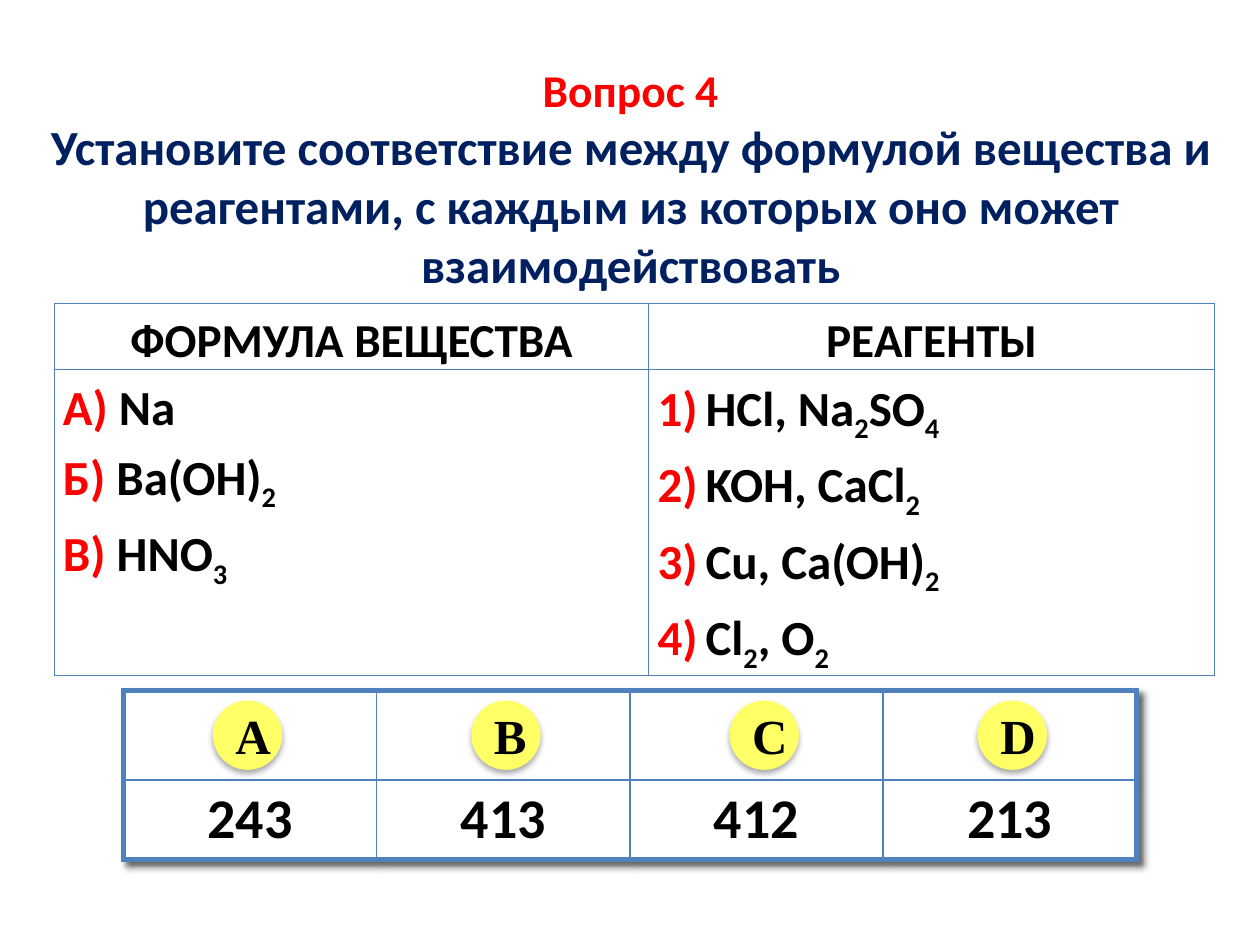
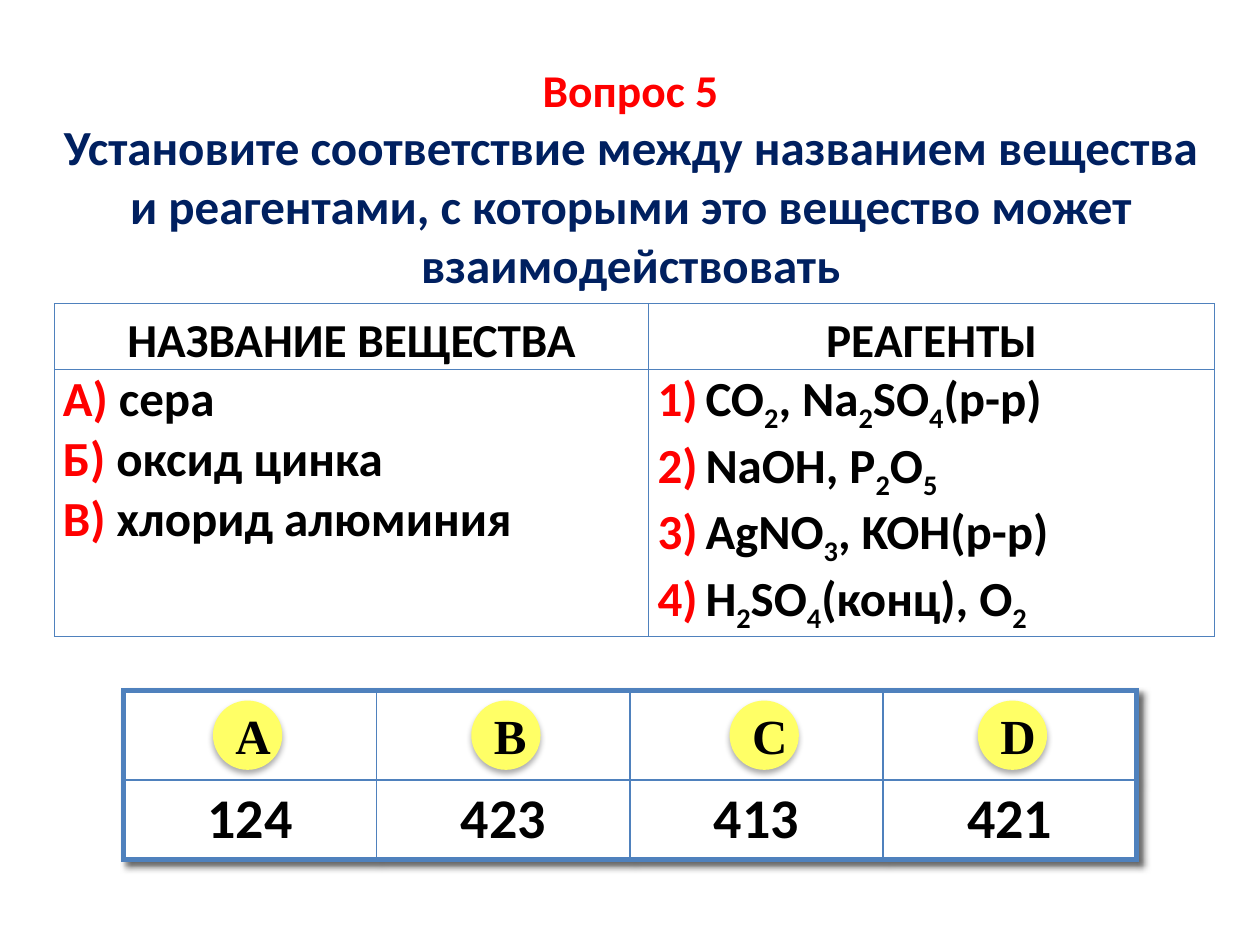
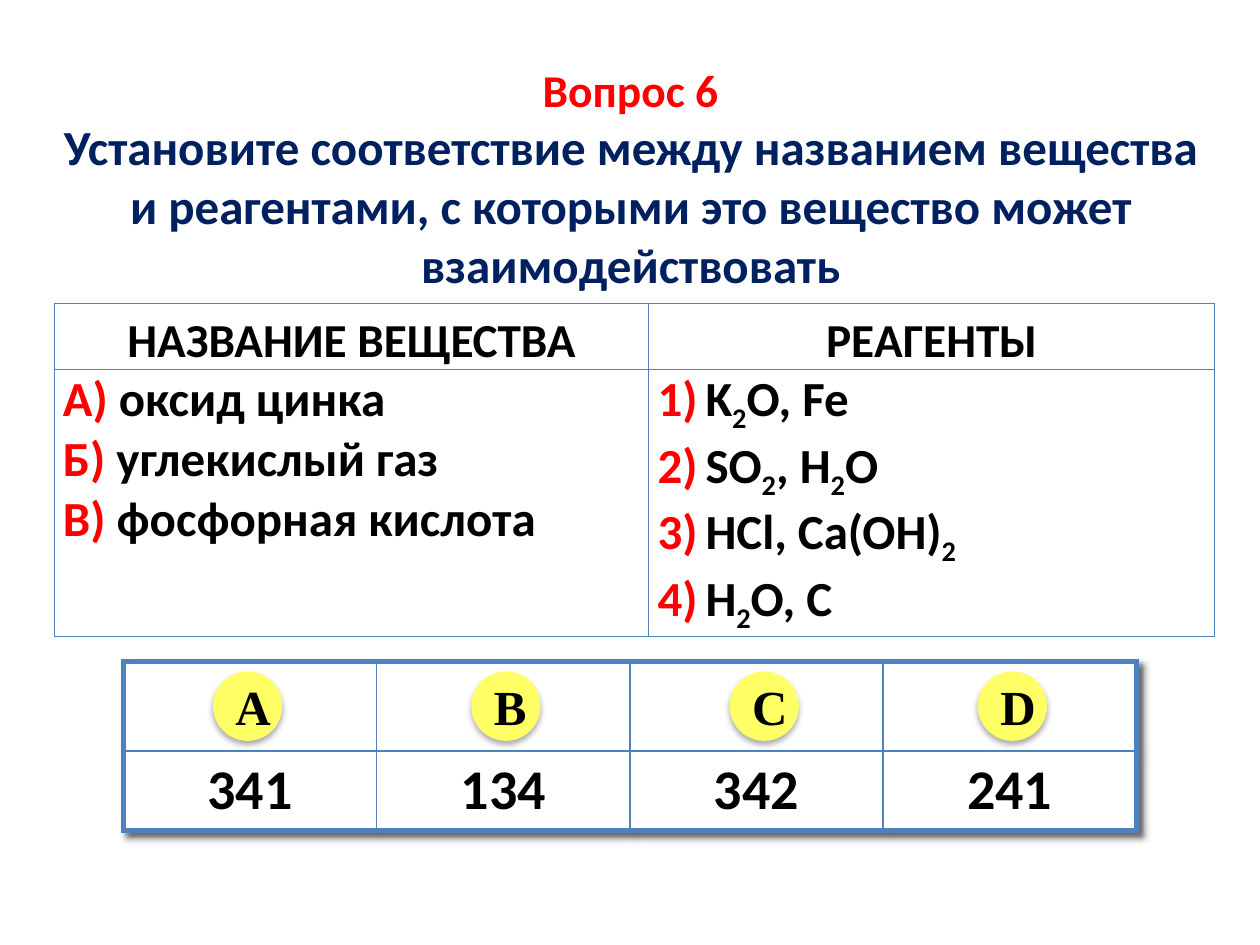
import itertools

import pptx
import pptx.dml.color
import pptx.enum.shapes
import pptx.enum.text
import pptx.oxml
import pptx.oxml.ns
import pptx.util
from pptx.util import Inches

RED = pptx.dml.color.RGBColor(0xFF, 0x00, 0x00)
NAVY = pptx.dml.color.RGBColor(0x00, 0x20, 0x60)
BLACK = pptx.dml.color.RGBColor(0x00, 0x00, 0x00)
WHITE = pptx.dml.color.RGBColor(0xFF, 0xFF, 0xFF)
YELLOW = pptx.dml.color.RGBColor(0xFF, 0xFF, 0x66)
BLUE = pptx.dml.color.RGBColor(0x4F, 0x81, 0xBD)

CENTER = pptx.enum.text.PP_ALIGN.CENTER
MIDDLE = pptx.enum.text.MSO_ANCHOR.MIDDLE
NAMESPACE = pptx.oxml.ns.nsdecls("a")

TITLE_ONLY_LAYOUT = 5
BADGE_LEFTS = (1.69, 3.74, 5.79, 7.76)
BADGE_SIZE = 0.55
LIST_INDENT = 0.38

SUBSTANCE_TASK = ("Установите соответствие между названием вещества и реагентами, "
                  "с которыми это вещество может взаимодействовать")

QUESTIONS = [
    {
        "number": 4,
        "task": "Установите соответствие между формулой вещества и реагентами, "
                "с каждым из которых оно может взаимодействовать",
        "heading": "ФОРМУЛА ВЕЩЕСТВА",
        "substances": ["Na", "Ba(OH)2", "HNO3"],
        "reagents": ["HCl, Na2SO4", "KOH, CaCl2", "Cu, Ca(OH)2", "Cl2, O2"],
        "answers": ["243", "413", "412", "213"],
        "title_height": 4.49, "table_height": 2.66, "line_spacing": 1.15,
        "answers_top": 5.48,
    },
    {
        "number": 5,
        "task": SUBSTANCE_TASK,
        "heading": "НАЗВАНИЕ ВЕЩЕСТВА",
        "substances": ["сера", "оксид цинка", "хлорид алюминия"],
        "reagents": ["CO2, Na2SO4(р-р)", "NaOH, P2O5", "AgNO3, KOH(р-р)",
                     "H2SO4(конц), O2"],
        "answers": ["124", "423", "413", "421"],
        "title_height": 4.02, "table_height": 2.38, "line_spacing": 1,
        "answers_top": 5.48,
    },
    {
        "number": 6,
        "task": SUBSTANCE_TASK,
        "heading": "НАЗВАНИЕ ВЕЩЕСТВА",
        "substances": ["оксид цинка", "углекислый газ", "фосфорная кислота"],
        "reagents": ["K2O, Fe", "SO2, H2O", "HCl, Ca(OH)2", "H2O, C"],
        "answers": ["341", "134", "342", "241"],
        "title_height": 3.55, "table_height": 2.38, "line_spacing": 1,
        "answers_top": 5.25,
    },
]


def shadow_xml(blur, distance, degrees, opacity):
    """Outer black shadow; blur and distance in points, opacity in percent."""
    return pptx.oxml.parse_xml(
        f'<a:outerShdw {NAMESPACE} blurRad="{pptx.util.Pt(blur)}" '
        f'dist="{pptx.util.Pt(distance)}" dir="{degrees * 60000}" rotWithShape="0">'
        f'<a:srgbClr val="{BLACK}"><a:alpha val="{opacity * 1000}"/></a:srgbClr>'
        '</a:outerShdw>')


def set_borders(cell, left, right, top, bottom):
    """Border widths are in points."""
    properties = cell._tc.get_or_add_tcPr()
    for side, width in zip("LRTB", (left, right, top, bottom)):
        properties.append(pptx.oxml.parse_xml(
            f'<a:ln{side} {NAMESPACE} w="{pptx.util.Pt(width)}"><a:solidFill>'
            f'<a:srgbClr val="{BLUE}"/></a:solidFill></a:ln{side}>'))


def set_margins(cell):
    cell.margin_left = cell.margin_right = Inches(0.07)
    cell.margin_top = cell.margin_bottom = 0


def hang(paragraph, numbered):
    """Hanging indent, with red automatic numbers when numbered."""
    properties = paragraph._p.get_or_add_pPr()
    properties.set("marL", str(Inches(LIST_INDENT)))
    properties.set("indent", str(-Inches(LIST_INDENT)))
    if numbered:
        for element in (f'<a:buClr {NAMESPACE}><a:srgbClr val="{RED}"/></a:buClr>',
                        f'<a:buAutoNum {NAMESPACE} type="arabicParenR"/>'):
            properties.append(pptx.oxml.parse_xml(element))


class Quiz:
    def __init__(self):
        self.presentation = pptx.Presentation()
        self.presentation.slide_width = Inches(10)
        self.presentation.slide_height = Inches(7.5)
        self.slide = None

    def start_slide(self):
        layout = self.presentation.slide_layouts[TITLE_ONLY_LAYOUT]
        self.slide = self.presentation.slides.add_slide(layout)

    def style(self, font, size, color=BLACK, name="Calibri"):
        font.size = pptx.util.Pt(size)
        font.name = name
        font.bold = True
        font.color.rgb = color

    def add_title(self, number, task, height):
        title = self.slide.shapes.title
        title.left, title.top = Inches(0.28), Inches(0.44)
        title.width, title.height = Inches(9.45), Inches(height)
        title.fill.solid()
        title.fill.fore_color.rgb = WHITE
        text_frame = title.text_frame
        text_frame.text = f"Вопрос {number}\n{task}"
        text_frame.auto_size = pptx.enum.text.MSO_AUTO_SIZE.NONE
        text_frame.vertical_anchor = pptx.enum.text.MSO_ANCHOR.TOP
        for paragraph, size, color in zip(text_frame.paragraphs, (26, 28), (RED, NAVY)):
            paragraph.alignment = CENTER
            self.style(paragraph.runs[0].font, size, color)

    def add_table(self, left, top, widths, heights):
        shape = self.slide.shapes.add_table(
            len(heights), len(widths), Inches(left), Inches(top),
            Inches(sum(widths)), Inches(sum(heights)))
        table = shape.table
        table.first_row = table.horz_banding = False
        for column, width in zip(table.columns, widths):
            column.width = Inches(width)
        for row, height in zip(table.rows, heights):
            row.height = Inches(height)
        return shape

    def add_formula(self, paragraph, text):
        """Write the text with its digits as subscripts."""
        for is_index, characters in itertools.groupby(text, str.isdigit):
            run = paragraph.add_run()
            run.text = "".join(characters)
            self.style(run.font, 28)
            if is_index:
                run._r.get_or_add_rPr().set("baseline", "-25000")

    def fill_list(self, cell, items, line_spacing, labels=None):
        """Items start with the given labels, or with numbers if there are none."""
        text_frame = cell.text_frame
        for index, item in enumerate(items):
            paragraph = text_frame.add_paragraph() if index else text_frame.paragraphs[0]
            hang(paragraph, numbered=labels is None)
            paragraph.line_spacing = line_spacing
            if labels:
                paragraph.text = f"{labels[index]}) "
                self.style(paragraph.runs[0].font, 28, RED)
            self.add_formula(paragraph, item)
        if labels is None:
            paragraph.space_after = pptx.util.Pt(6)

    def add_matching_table(self, question):
        shape = self.add_table(0.43, 2.41, (4.72, 4.49), (0.41, 0.41))
        shape.height = Inches(question["table_height"])
        table = shape.table
        for cell in table.iter_cells():
            set_margins(cell)
            set_borders(cell, 0.5, 0.5, 0.5, 0.5)
            cell.fill.background()
        for column, heading in enumerate((question["heading"], "РЕАГЕНТЫ")):
            cell = table.cell(0, column)
            cell.text = heading
            cell.vertical_anchor = MIDDLE
            paragraph = cell.text_frame.paragraphs[0]
            paragraph.alignment = CENTER
            paragraph.line_spacing = 1.15
            paragraph.space_after = pptx.util.Pt(6)
            self.style(paragraph.runs[0].font, 27)
        spacing = question["line_spacing"]
        self.fill_list(table.cell(1, 0), question["substances"], spacing, "АБВ")
        self.fill_list(table.cell(1, 1), question["reagents"], spacing)

    def add_answers(self, answers, top):
        table = self.add_table(0.98, top, [2.01] * 4, (0.71, 0.63)).table
        effects = pptx.oxml.parse_xml(f"<a:effectLst {NAMESPACE}/>")
        effects.append(shadow_xml(4, 3, 45, 60))
        table._tbl.tblPr.insert(0, effects)
        last = len(answers) - 1
        for column, answer in enumerate(answers):
            left, right = 3 if column == 0 else 1, 3 if column == last else 1
            set_borders(table.cell(0, column), left, right, 3, 1)
            cell = table.cell(1, column)
            set_borders(cell, left, right, 1, 3)
            set_margins(cell)
            cell.text = answer
            cell.vertical_anchor = MIDDLE
            paragraph = cell.text_frame.paragraphs[0]
            paragraph.alignment = CENTER
            self.style(paragraph.runs[0].font, 32)
        for cell in table.iter_cells():
            cell.fill.solid()
            cell.fill.fore_color.rgb = WHITE
        for letter, badge_left in zip("ABCD", BADGE_LEFTS):
            self.add_badge(letter, badge_left, top + 0.08)

    def add_badge(self, letter, left, top):
        badge = self.slide.shapes.add_shape(
            pptx.enum.shapes.MSO_SHAPE.OVAL, Inches(left), Inches(top),
            Inches(BADGE_SIZE), Inches(BADGE_SIZE))
        badge.fill.solid()
        badge.fill.fore_color.rgb = YELLOW
        badge.line.fill.background()
        badge.shadow.inherit = False
        effects = badge._element.spPr.find(pptx.oxml.ns.qn("a:effectLst"))
        effects.append(shadow_xml(3.5, 2.2, 90, 32))
        badge.text_frame.text = letter
        badge.text_frame.vertical_anchor = MIDDLE
        paragraph = badge.text_frame.paragraphs[0]
        paragraph.alignment = CENTER
        self.style(paragraph.runs[0].font, 28, name="Times New Roman")


def main():
    quiz = Quiz()
    for question in QUESTIONS:
        quiz.start_slide()
        quiz.add_title(question["number"], question["task"], question["title_height"])
        quiz.add_answers(question["answers"], question["answers_top"])
        quiz.add_matching_table(question)
    quiz.presentation.save("out.pptx")


if __name__ == "__main__":
    main()
